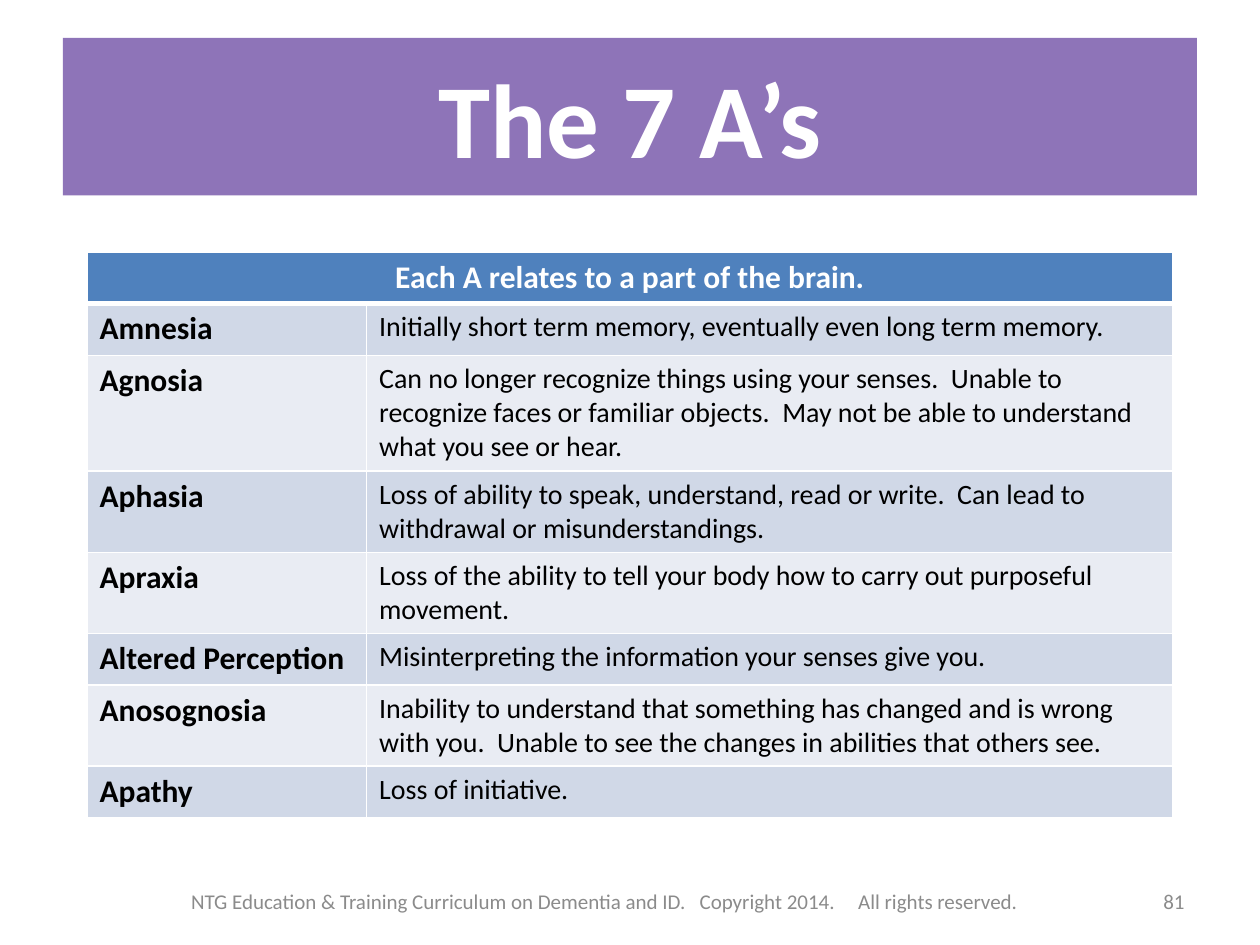
from lxml import etree
from pptx import Presentation
from pptx import util as u
from pptx.dml import color
from pptx.enum import shapes, text
from pptx.oxml import ns

WHITE, BLACK, GREY = "FFFFFF", "000000", "8B8B8B"
PURPLE, BLUE = "8E74B8", "4F81BD"
BANDS = ("D0D8E7", "E9ECF3")
LINE, THICK = 0.96, 3
COLS = (2.22, 6.4)
HEAD = "Each A relates to a part of the brain."
ROWS = (
    ("Amnesia", "Initially short term memory, eventually even long term memory.", 0.41),
    ("Agnosia", "Can no longer recognize things using your senses.  Unable to recognize faces "
     "or familiar objects.  May not be able to understand what you see or hear.", 0.92),
    ("Aphasia", "Loss of ability to speak, understand, read or write.  Can lead to "
     "withdrawal or misunderstandings.", 0.64),
    ("Apraxia", "Loss of the ability to tell your body how to carry out purposeful movement.", 0.64),
    ("Altered Perception", "Misinterpreting the information your senses give you.", 0.41),
    ("Anosognosia", "Inability to understand that something has changed and is wrong with you.  "
     "Unable to see the changes in abilities that others see.", 0.64),
    ("Apathy", "Loss of initiative.", 0.41),
)
FOOT = ("NTG Education & Training Curriculum on Dementia and ID.   Copyright 2014.     "
        "All rights reserved.")


def paint(fill, tone):
    """Fill with a solid hex colour."""
    fill.solid()
    fill.fore_color.rgb = color.RGBColor.from_string(tone)


def write(frame, words, size, tone, bold=False, align="LEFT"):
    """Write one run into the first paragraph of a frame."""
    frame.word_wrap = True
    para = frame.paragraphs[0]
    para.alignment = getattr(text.PP_ALIGN, align)
    run = para.add_run()
    run.text = words
    run.font.name = "Calibri"
    run.font.size = u.Pt(size)
    run.font.bold = bold
    paint(run.font.fill, tone)


def edge(cell, top=LINE, base=LINE):
    """Draw white borders round a cell."""
    props = cell._tc.get_or_add_tcPr()
    sides = (("L", LINE), ("R", LINE), ("T", top), ("B", base))
    for spot, (side, width) in enumerate(sides):
        line = etree.Element(ns.qn(f"a:ln{side}"), w=str(u.Pt(width)))
        solid = etree.SubElement(line, ns.qn("a:solidFill"))
        etree.SubElement(solid, ns.qn("a:srgbClr"), val=WHITE)
        props.insert(spot, line)


def banner(slide, box):
    """Place the title on its coloured bar."""
    bar = slide.shapes.add_shape(shapes.MSO_SHAPE.RECTANGLE, *map(u.Inches, box))
    bar.shadow.inherit = False
    bar.line.fill.background()
    paint(bar.fill, PURPLE)
    bar.text_frame.vertical_anchor = text.MSO_ANCHOR.MIDDLE
    write(bar.text_frame, "The 7 A’s", 60, WHITE, True, "CENTER")


def grid(slide, box):
    """Place the table with its header and banded rows."""
    table = slide.shapes.add_table(len(ROWS) + 1, len(COLS), *map(u.Inches, box)).table
    for col, width in zip(table.columns, COLS):
        col.width = u.Inches(width)
    table.rows[0].height = u.Inches(0.41)
    for cell in table.rows[0].cells:
        paint(cell.fill, BLUE)
        edge(cell, base=THICK)
    table.cell(0, 0).merge(table.cell(0, 1))
    write(table.cell(0, 0).text_frame, HEAD, 18, WHITE, True, "CENTER")
    for num, (name, note, high) in enumerate(ROWS, 1):
        table.rows[num].height = u.Inches(high)
        left, right = table.rows[num].cells
        write(left.text_frame, name, 18, BLACK, True)
        write(right.text_frame, note, 16, BLACK)
        for cell in (left, right):
            paint(cell.fill, BANDS[(num - 1) % 2])
            edge(cell, top=THICK if num == 1 else LINE)


def footer(slide, box, words, align):
    """Place one grey footer text."""
    frame = slide.shapes.add_textbox(*map(u.Inches, box)).text_frame
    frame.vertical_anchor = text.MSO_ANCHOR.MIDDLE
    write(frame, words, 12, GREY, align=align)


def main():
    """Build and save the slide."""
    deck = Presentation()
    deck.slide_width, deck.slide_height = u.Inches(10), u.Inches(7.5)
    slide = deck.slides.add_slide(deck.slide_layouts[6])
    banner(slide, (0.5, 0.3, 9, 1.25))
    grid(slide, (0.69, 2, 8.62, 4.47))
    footer(slide, (0.69, 6.95, 8.22, 0.4), FOOT, "CENTER")
    footer(slide, (7.17, 6.95, 2.33, 0.4), "81", "RIGHT")
    deck.save("out.pptx")


if __name__ == "__main__":
    main()
